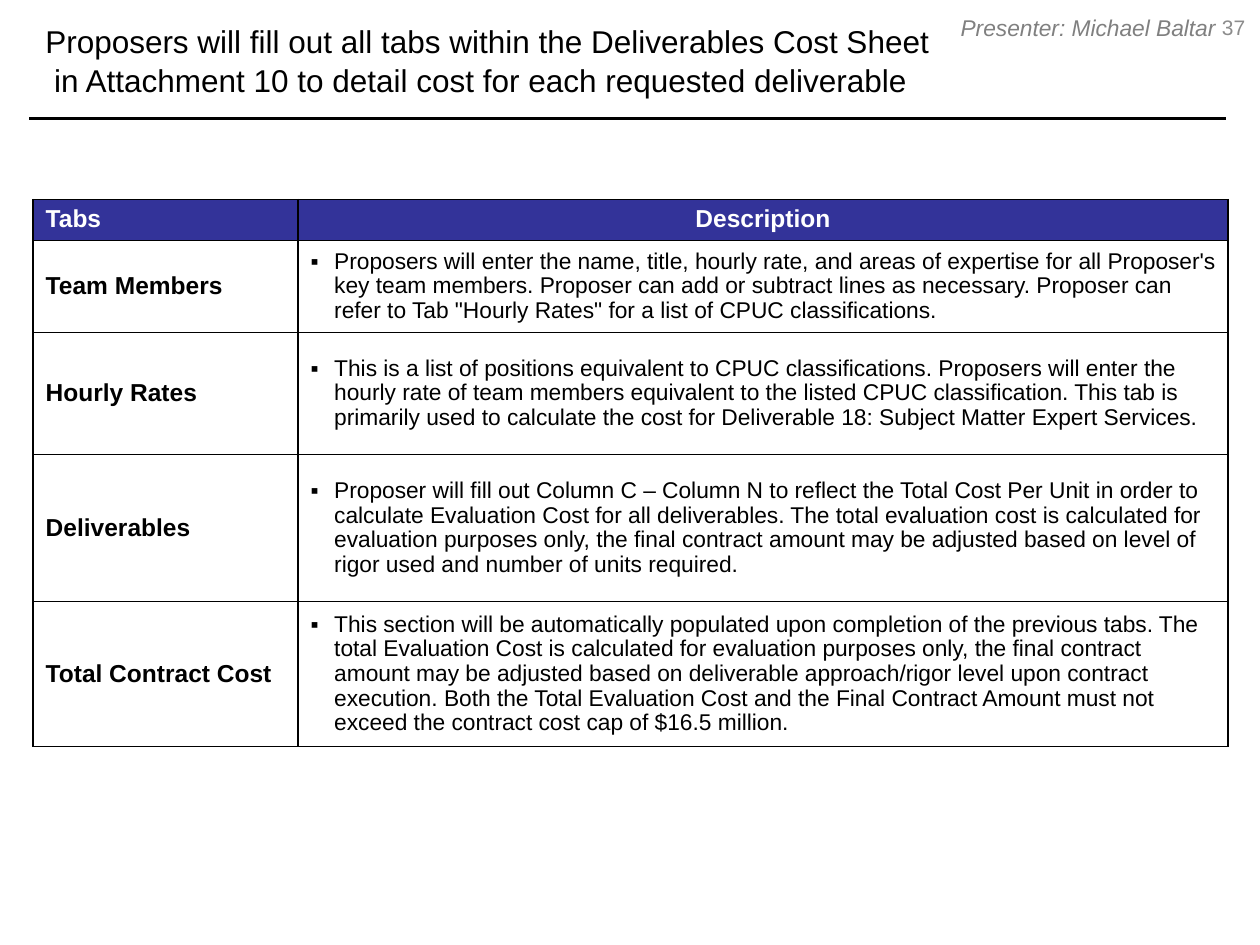
from dataclasses import dataclass

from lxml.etree import SubElement
from pptx import Presentation
from pptx.dml.color import RGBColor
from pptx.enum.shapes import MSO_CONNECTOR
from pptx.enum.text import MSO_ANCHOR, PP_ALIGN
from pptx.oxml.ns import qn
from pptx.util import Pt


@dataclass(frozen=True)
class Theme:
    font: str = "Arial"
    black: str = "000000"
    white: str = "FFFFFF"
    header: str = "333399"
    presenter: str = "808080"
    number: str = "8C8C8C"
    title_size: int = 18
    label_size: int = 14
    body_size: int = 13
    number_size: int = 12
    title_spacing: float = 1.05
    table_spacing: float = 0.97
    rule: float = 2
    border: float = 1
    inner_border: float = 0.5
    indent: float = 13.5


class Deck:
    def __init__(self, theme, width, height):
        self.t = theme
        self.prs = Presentation()
        self.prs.slide_width, self.prs.slide_height = Pt(width), Pt(height)
        self.s = self.prs.slides.add_slide(self.prs.slide_layouts[6])

    def run(self, p, text, size, color, bold=False, italic=False):
        r = p.add_run()
        r.text = text
        f = r.font
        f.name, f.size, f.bold, f.italic = self.t.font, Pt(size), bold, italic
        f.color.rgb = RGBColor.from_string(color)

    def text(self, box, lines, size, color, align=PP_ALIGN.LEFT, spacing=1.0, italic=False):
        tf = self.s.shapes.add_textbox(*map(Pt, box)).text_frame
        tf.word_wrap = True
        tf.vertical_anchor = MSO_ANCHOR.MIDDLE
        for i, line in enumerate(lines):
            p = tf.add_paragraph() if i else tf.paragraphs[0]
            p.alignment, p.line_spacing = align, spacing
            self.run(p, line, size, color, italic=italic)

    def line(self, x1, y1, x2, y2):
        c = self.s.shapes.add_connector(MSO_CONNECTOR.STRAIGHT, *map(Pt, (x1, y1, x2, y2)))
        c.line.color.rgb = RGBColor.from_string(self.t.black)
        c.line.width = Pt(self.t.rule)
        SubElement(c._element.spPr, qn("a:effectLst"))

    def bullet(self, p):
        pPr = p._p.get_or_add_pPr()
        pPr.set("marL", str(Pt(self.t.indent)))
        pPr.set("indent", str(-Pt(self.t.indent)))
        SubElement(pPr, qn("a:buFont"), typeface=self.t.font)
        SubElement(pPr, qn("a:buChar"), char="▪")

    def borders(self, cell, widths):
        tcPr = cell._tc.get_or_add_tcPr()
        for i, (side, width) in enumerate(zip(("lnL", "lnR", "lnT", "lnB"), widths)):
            ln = tcPr.makeelement(qn(f"a:{side}"), {"w": str(Pt(width))})
            fill = SubElement(ln, qn("a:solidFill"))
            SubElement(fill, qn("a:srgbClr"), val=self.t.black)
            tcPr.insert(i, ln)

    def table(self, left, top, widths, heights, rows):
        t = self.t
        table = self.s.shapes.add_table(
            len(rows), len(widths), Pt(left), Pt(top), Pt(sum(widths)), Pt(sum(heights))
        ).table
        for col, width in zip(table.columns, widths):
            col.width = Pt(width)
        for i, (height, texts) in enumerate(zip(heights, rows)):
            table.rows[i].height = Pt(height)
            for j, text in enumerate(texts):
                cell = table.cell(i, j)
                header, body = i == 0, i > 0 and j == 1
                cell.vertical_anchor = MSO_ANCHOR.MIDDLE
                cell.fill.solid()
                cell.fill.fore_color.rgb = RGBColor.from_string(t.header if header else t.white)
                p = cell.text_frame.paragraphs[0]
                p.line_spacing = t.table_spacing
                p.alignment = PP_ALIGN.CENTER if header and j else PP_ALIGN.LEFT
                if body:
                    self.bullet(p)
                self.run(p, text, t.body_size if body else t.label_size,
                         t.white if header else t.black, bold=not body)
                bottom = t.border if i == len(rows) - 1 else t.inner_border
                self.borders(cell, (t.border, t.border, t.inner_border, bottom))


TABS = [
    ("Tabs", "Description"),
    ("Team Members",
     "Proposers will enter the name, title, hourly rate, and areas of expertise for all "
     "Proposer's key team members. Proposer can add or subtract lines as necessary. "
     "Proposer can refer to Tab \"Hourly Rates\" for a list of CPUC classifications."),
    ("Hourly Rates",
     "This is a list of positions equivalent to CPUC classifications. Proposers will enter "
     "the hourly rate of team members equivalent to the listed CPUC classification. This tab "
     "is primarily used to calculate the cost for Deliverable 18: Subject Matter Expert "
     "Services."),
    ("Deliverables",
     "Proposer will fill out Column C – Column N to reflect the Total Cost Per Unit in order "
     "to calculate Evaluation Cost for all deliverables. The total evaluation cost is "
     "calculated for evaluation purposes only, the final contract amount may be adjusted "
     "based on level of rigor used and number of units required."),
    ("Total Contract Cost",
     "This section will be automatically populated upon completion of the previous tabs. The "
     "total Evaluation Cost is calculated for evaluation purposes only, the final contract "
     "amount may be adjusted based on deliverable approach/rigor level upon contract "
     "execution. Both the Total Evaluation Cost and the Final Contract Amount must not exceed "
     "the contract cost cap of $16.5 million."),
]


def main():
    t = Theme()
    deck = Deck(t, 720, 540)

    # Title and rule
    deck.line(16.8, 67.6, 700.8, 67.6)
    deck.text((18.8, 0, 680, 68),
              ["Proposers will fill out all tabs within the Deliverables Cost Sheet",
               " in Attachment 10 to detail cost for each requested deliverable"],
              t.title_size, t.black, spacing=t.title_spacing)

    # Slide number and presenter
    deck.text((689.8, 1, 30.2, 29), ["37"], t.number_size, t.number, PP_ALIGN.CENTER)
    deck.text((504, 6.5, 197.5, 18), ["Presenter: Michael Baltar"],
              t.body_size, t.presenter, PP_ALIGN.RIGHT, italic=True)

    # Tab descriptions
    deck.table(18.9, 113.8, (151.4, 531.4), (22.8, 50.8, 69.8, 84, 80), TABS)

    deck.prs.save("out.pptx")


if __name__ == "__main__":
    main()
